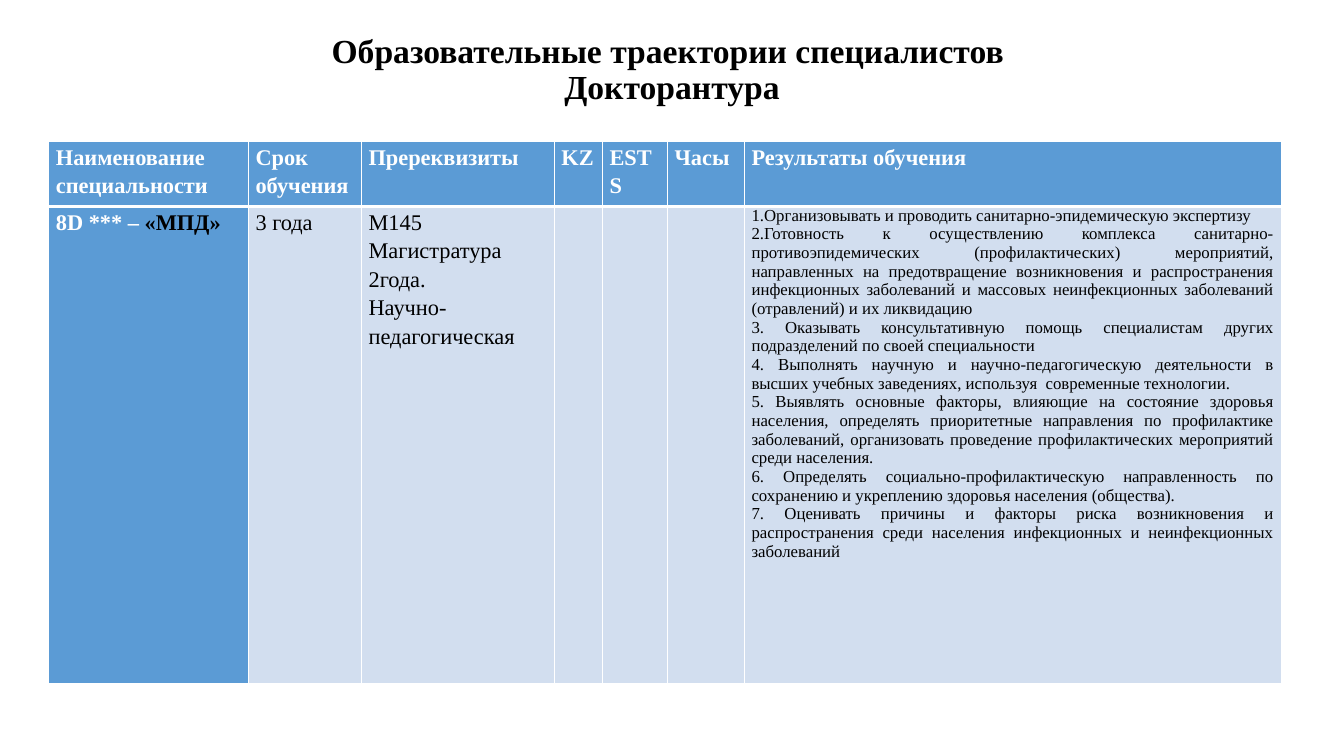
from dataclasses import dataclass
from lxml.etree import SubElement
from pptx import Presentation
from pptx.dml.color import RGBColor as RGB
from pptx.enum.text import MSO_ANCHOR as Anchor, PP_ALIGN as Align
from pptx.oxml.ns import qn
from pptx.util import Cm, Pt


@dataclass(frozen=True)
class Theme:
    font: str = "Times New Roman"
    black: RGB = RGB(0, 0, 0)
    white: RGB = RGB(255, 255, 255)
    blue: RGB = RGB(0x5B, 0x9B, 0xD5)
    pale: RGB = RGB(0xD2, 0xDE, 0xEF)
    title: Pt = Pt(24)
    body: Pt = Pt(16)
    small: Pt = Pt(12)


theme = Theme()


def add_run(para, text, size, color, bold):
    run = para.add_run()
    run.text = text
    style = {"name": theme.font, "size": size, "bold": bold}
    for key, value in style.items():
        setattr(run.font, key, value)
    run.font.color.rgb = color


def add_edges(cell, widths):
    """Draw white cell borders; widths maps a side (L, R, T, B) to points."""
    props = cell._tc.get_or_add_tcPr()
    for spot, (side, width) in enumerate(widths.items()):
        line = SubElement(props, qn(f"a:ln{side}"), w=str(Pt(width)))
        fill = SubElement(line, qn("a:solidFill"))
        SubElement(fill, qn("a:srgbClr"), val=str(theme.white))
        props.insert(spot, line)


deck = Presentation()
deck.slide_width, deck.slide_height = Cm(33.87), Cm(19.05)
slide = deck.slides.add_slide(deck.slide_layouts[6])

# Title
frame = slide.shapes.add_textbox(Cm(2.33), Cm(1.02), Cm(29.21), Cm(1.52)).text_frame
frame.word_wrap = True
frame.vertical_anchor = Anchor.MIDDLE
para = frame.paragraphs[0]
para.alignment = Align.CENTER
para.line_spacing = 0.9
add_run(para, "Образовательные траектории специалистов ", theme.title, theme.black, True)
para.add_line_break()
add_run(para, "Докторантура", theme.title, theme.black, True)

# Table text: each cell is a list of paragraphs
heads = ["Наименование специальности", "Срок обучения", "Пререквизиты",
         "KZ", "ESTS", "Часы", "Результаты обучения"]
results = [
    "Организовывать и проводить санитарно-эпидемическую экспертизу",
    "Готовность к осуществлению комплекса санитарно-противоэпидемических "
    "(профилактических) мероприятий, направленных на предотвращение "
    "возникновения и распространения инфекционных заболеваний и массовых "
    "неинфекционных заболеваний (отравлений) и их ликвидацию",
    "3. Оказывать консультативную помощь специалистам других подразделений "
    "по своей специальности",
    "4. Выполнять научную и научно-педагогическую деятельности в высших "
    "учебных заведениях, используя  современные технологии.",
    "5. Выявлять основные факторы, влияющие на состояние здоровья населения, "
    "определять приоритетные направления по профилактике заболеваний, "
    "организовать проведение профилактических мероприятий среди населения.",
    "6. Определять социально-профилактическую направленность по сохранению и "
    "укреплению здоровья населения (общества).",
    "7. Оценивать причины и факторы риска возникновения и распространения "
    "среди населения инфекционных и неинфекционных заболеваний",
]
auto = 2  # leading results numbered by the list itself
rows = [
    [[head] for head in heads],
    [["8D *** – "], ["3 года"],
     ["М145 Магистратура 2года.", "Научно-педагогическая"], [], [], [], results],
]
widths = [5.03, 2.85, 4.86, 1.21, 1.64, 1.94, 13.53]
heights = [1.64, 12.03]

# Table
table = slide.shapes.add_table(len(rows), len(widths), Cm(1.23), Cm(3.56),
                               Cm(sum(widths)), Cm(sum(heights))).table
for col, width in zip(table.columns, widths):
    col.width = Cm(width)
for row, height in zip(table.rows, heights):
    row.height = Cm(height)

margins = {"margin_left": Cm(0.18), "margin_right": Cm(0.18),
           "margin_top": 0, "margin_bottom": 0}
for r, row in enumerate(rows):
    for c, texts in enumerate(row):
        cell = table.cell(r, c)
        strong = r == 0 or c == 0
        for key, value in margins.items():
            setattr(cell, key, value)
        cell.fill.solid()
        cell.fill.fore_color.rgb = theme.blue if strong else theme.pale
        add_edges(cell, {"L": 1, "R": 1, "T": 3 if r else 1, "B": 1 if r else 3})
        for n, text in enumerate(texts):
            para = cell.text_frame.paragraphs[0] if n == 0 else cell.text_frame.add_paragraph()
            listed = texts is results
            if listed:
                para.alignment = Align.JUSTIFY
                if n < auto:
                    props = para._p.get_or_add_pPr()
                    props.set("marL", "0")
                    props.set("indent", "0")
                    SubElement(props, qn("a:buFont"), typeface="+mj-lt")
                    SubElement(props, qn("a:buAutoNum"), type="arabicPeriod")
            else:
                para.line_spacing = 1.15
            add_run(para, text, theme.small if listed else theme.body,
                    theme.white if strong else theme.black, strong)

add_run(table.cell(1, 0).text_frame.paragraphs[0], "«МПД»", theme.body, theme.black, True)

deck.save("out.pptx")
